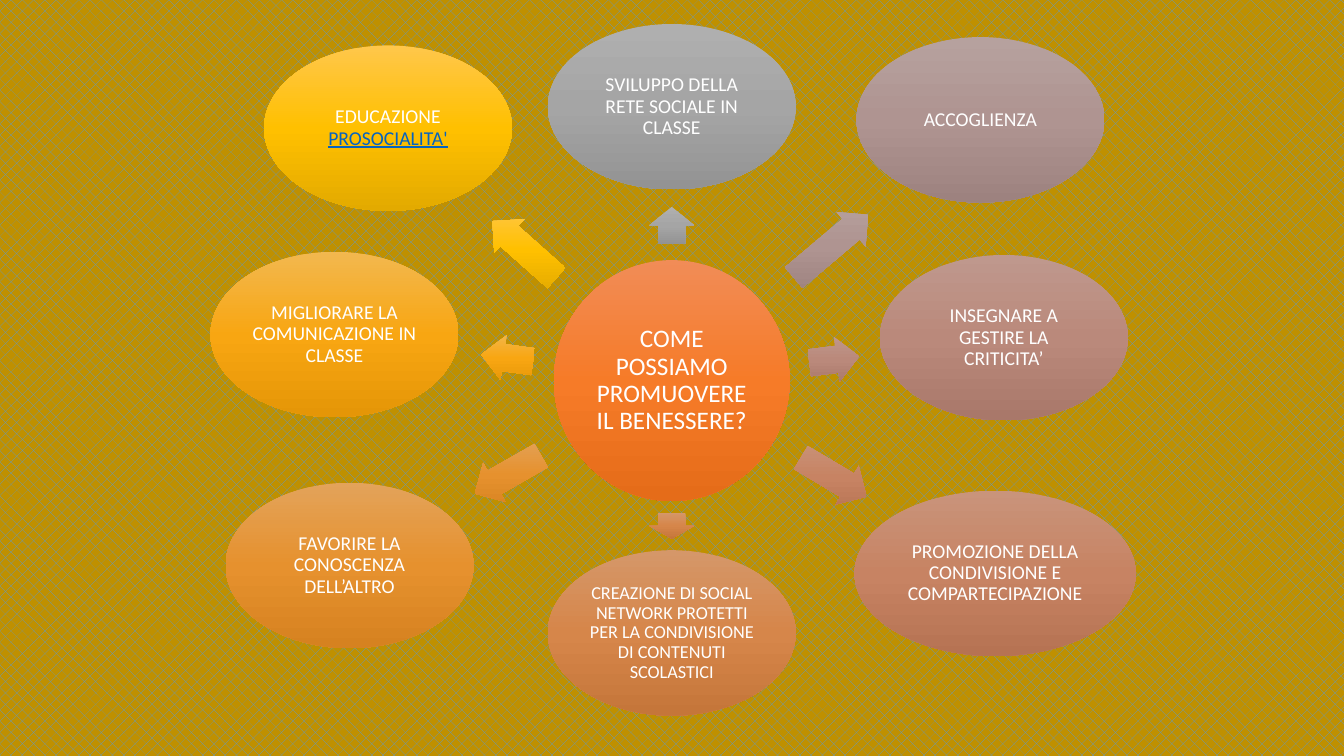
import math

import lxml.etree
import pptx
import pptx.dml.color
import pptx.enum.dml
import pptx.enum.shapes
import pptx.enum.text
import pptx.oxml
import pptx.oxml.ns
import pptx.util

Cm = pptx.util.Cm
SHAPES = pptx.enum.shapes.MSO_SHAPE

HUB_X, HUB_Y = 16.93, 9.59
HUB_WIDTH, HUB_HEIGHT = 5.94, 6.07
TOPIC_WIDTH, TOPIC_HEIGHT = 6.25, 4.17
ARROW_HEIGHT = 1.14

HUB_COLOURS = ("F18C57", "F67B28", "E56C19")

# text, centre x, centre y, width, font size, arrow distance, arrow length, colours
TOPICS = [
    ("SVILUPPO DELLA RETE SOCIALE IN CLASSE", 16.93, 2.69, TOPIC_WIDTH, 14,
     3.91, 0.94, ("AFAFAF", "A5A5A5", "939393")),
    ("ACCOGLIENZA", 24.71, 3.02, TOPIC_WIDTH, 14,
     5.25, 2.46, ("B6A19E", "AF9491", "9D827F")),
    ("INSEGNARE A GESTIRE LA CRITICITA’", 25.3, 8.51, TOPIC_WIDTH, 14,
     4.13, 1.27, ("BF988D", "BA897B", "A9786A")),
    ("PROMOZIONE DELLA CONDIVISIONE E COMPARTECIPAZIONE", 25.08, 14.45, 7.09, 14,
     4.75, 1.93, ("C9947B", "C78363", "B67353")),
    ("CREAZIONE DI SOCIAL NETWORK PROTETTI PER LA CONDIVISIONE DI CONTENUTI SCOLASTICI",
     16.93, 15.95, TOPIC_WIDTH, 13,
     3.66, 0.66, ("D59769", "D6864A", "C5763A")),
    ("FAVORIRE LA CONOSCENZA DELL’ALTRO", 8.81, 14.25, TOPIC_WIDTH, 14,
     4.76, 1.93, ("E3A35A", "E6912E", "D68220")),
    ("MIGLIORARE LA COMUNICAZIONE IN CLASSE", 8.43, 8.43, TOPIC_WIDTH, 14,
     4.19, 1.32, ("F2B84F", "F8A612", "E59607")),
    ("EDUCAZIONE ", 9.78, 3.23, TOPIC_WIDTH, 14,
     4.97, 2.16, ("FFC74B", "FFC000", "E3AA00")),
]


def colour(hex_value):
    return pptx.dml.color.RGBColor.from_string(hex_value)


def fill_gradient(shape, colours):
    shape.fill.gradient()
    gradient = shape.fill._xPr.find(pptx.oxml.ns.qn("a:gradFill"))
    gradient.set("rotWithShape", "0")
    stops = gradient.find(pptx.oxml.ns.qn("a:gsLst"))
    for stop in list(stops):
        stops.remove(stop)
    for position, hex_value in zip((0, 50000, 100000), colours):
        stop = lxml.etree.SubElement(stops, pptx.oxml.ns.qn("a:gs"), pos=str(position))
        lxml.etree.SubElement(stop, pptx.oxml.ns.qn("a:srgbClr"), val=hex_value)
    shape.fill.gradient_angle = 270


def add_centred(slide, kind, x, y, width, height, colours):
    shape = slide.shapes.add_shape(
        kind, Cm(x - width / 2), Cm(y - height / 2), Cm(width), Cm(height))
    shape.shadow.inherit = False
    shape.line.fill.background()
    fill_gradient(shape, colours)
    return shape


def format_span(span, size, hex_value):
    span.font.name = "Calibri"
    span.font.size = pptx.util.Pt(size)
    span.font.color.rgb = colour(hex_value)


def add_ellipse(slide, text, x, y, width, height, size, inset, colours):
    ellipse = add_centred(slide, SHAPES.OVAL, x, y, width, height, colours)
    frame = ellipse.text_frame
    frame.word_wrap = True
    frame.vertical_anchor = pptx.enum.text.MSO_ANCHOR.MIDDLE
    frame.margin_left = frame.margin_right = Cm(inset)
    frame.margin_top = frame.margin_bottom = Cm(inset)
    frame.text = text
    para = frame.paragraphs[0]
    para.alignment = pptx.enum.text.PP_ALIGN.CENTER
    para.line_spacing = 0.9
    format_span(para.runs[0], size, "FFFFFF")
    return ellipse


def add_arrow(slide, topic_x, topic_y, distance, length, colours):
    angle = math.atan2(topic_y - HUB_Y, topic_x - HUB_X)
    arrow = add_centred(
        slide, SHAPES.RIGHT_ARROW,
        HUB_X + distance * math.cos(angle), HUB_Y + distance * math.sin(angle),
        length, ARROW_HEIGHT, colours)
    arrow.rotation = math.degrees(angle) % 360
    arrow.adjustments[0] = 0.6
    arrow.adjustments[1] = 0.5


def set_background(slide):
    fill = slide.background.fill
    fill.patterned()
    fill.pattern = pptx.enum.dml.MSO_PATTERN.PERCENT_25
    fill.fore_color.rgb = colour("5B9BD5")
    fill.back_color.rgb = colour("BF9000")


def main():
    deck = pptx.Presentation()
    deck.slide_width, deck.slide_height = Cm(33.87), Cm(19.05)
    slide = deck.slides.add_slide(deck.slide_layouts[6])
    set_background(slide)
    add_ellipse(slide, "COME POSSIAMO PROMUOVERE IL BENESSERE?", HUB_X, HUB_Y,
                HUB_WIDTH, HUB_HEIGHT, 18, 0.08, HUB_COLOURS)
    for text, x, y, width, size, distance, length, colours in TOPICS:
        add_arrow(slide, x, y, distance, length, colours)
        ellipse = add_ellipse(slide, text, x, y, width, TOPIC_HEIGHT, size, 0.05, colours)
    span = ellipse.text_frame.paragraphs[0].add_run()
    span.text = "PROSOCIALITA'"
    format_span(span, 14, "0563C1")
    span.font.underline = True
    deck.save("out.pptx")


if __name__ == "__main__":
    main()
